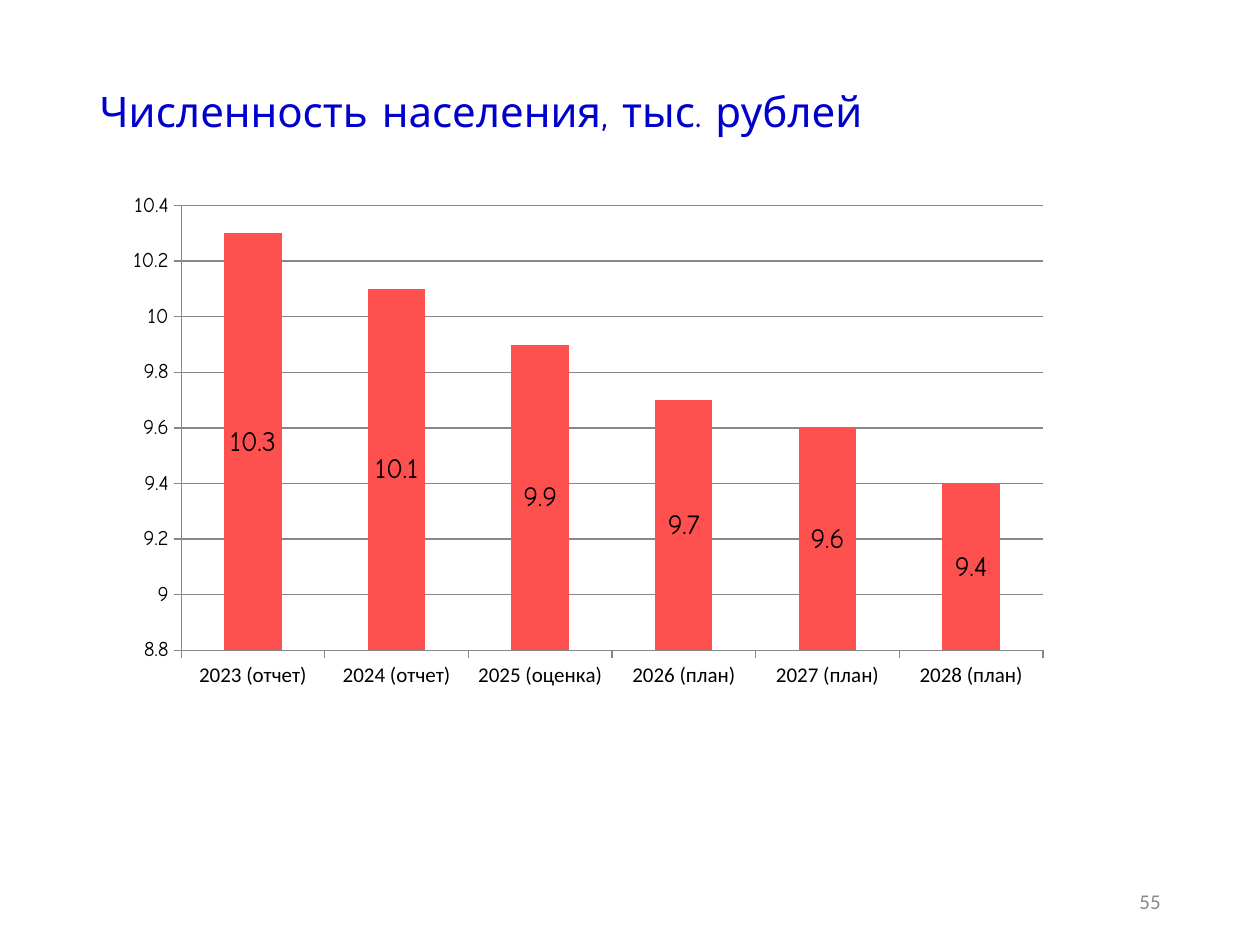
from dataclasses import dataclass

from lxml.etree import SubElement
from pptx import Presentation
from pptx.chart.data import CategoryChartData
from pptx.dml.color import RGBColor
from pptx.enum.chart import XL_CHART_TYPE as ChartType
from pptx.enum.chart import XL_LABEL_POSITION as LabelPosition
from pptx.enum.chart import XL_TICK_MARK as TickMark
from pptx.enum.text import MSO_ANCHOR as Anchor
from pptx.enum.text import MSO_AUTO_SIZE as AutoSize
from pptx.enum.text import PP_ALIGN as Align
from pptx.oxml.ns import qn
from pptx.util import Cm, Pt


@dataclass(frozen=True)
class Theme:
    heading: RGBColor = RGBColor(0x00, 0x00, 0xCC)
    text: RGBColor = RGBColor(0x00, 0x00, 0x00)
    muted: RGBColor = RGBColor(0x89, 0x89, 0x89)
    bar: RGBColor = RGBColor(0xFF, 0x50, 0x50)
    rule: RGBColor = RGBColor(0x87, 0x87, 0x87)
    accent_font: str = "Comic Neue"
    base_font: str = "Calibri"
    title_size: int = 24
    chart_size: int = 18
    label_size: int = 16
    small_size: int = 12


THEME = Theme()
POPULATION = {
    "2023 (отчет)": 10.3,
    "2024 (отчет)": 10.1,
    "2025 (оценка)": 9.9,
    "2026 (план)": 9.7,
    "2027 (план)": 9.6,
    "2028 (план)": 9.4,
}


def style_font(font, size, color=THEME.text, name=THEME.base_font):
    font.size = Pt(size)
    font.name = name
    font.color.rgb = color


def write_text(box, text, *, size, color, name, align=Align.LEFT, spacing=1.0):
    frame = box.text_frame
    frame.word_wrap = True
    frame.auto_size = AutoSize.NONE
    frame.vertical_anchor = Anchor.MIDDLE
    frame.text = text
    paragraph = frame.paragraphs[0]
    paragraph.alignment = align
    paragraph.line_spacing = spacing
    style_font(paragraph.runs[0].font, size, color, name)


def place_plot(chart, **fractions):
    """Fix the inner plot area, in fractions of the chart frame."""
    plot_area = chart._chartSpace.chart.plotArea
    for layout in plot_area.findall(qn("c:layout")):
        plot_area.remove(layout)
    layout = SubElement(plot_area, qn("c:layout"))
    plot_area.insert(0, layout)
    manual = SubElement(layout, qn("c:manualLayout"))
    settings = {"layoutTarget": "inner", "xMode": "edge", "yMode": "edge", **fractions}
    for tag, value in settings.items():
        SubElement(manual, qn(f"c:{tag}")).set("val", str(value))


def style_axis(axis, font_name):
    axis.major_tick_mark = TickMark.OUTSIDE
    axis.minor_tick_mark = TickMark.NONE
    axis.format.line.color.rgb = THEME.rule
    axis.format.line.width = Pt(0.75)
    style_font(axis.tick_labels.font, THEME.small_size, name=font_name)


def add_population_chart(slide):
    data = CategoryChartData()
    data.categories = list(POPULATION)
    data.add_series("Series 1", list(POPULATION.values()))
    chart = slide.shapes.add_chart(
        ChartType.COLUMN_STACKED, Cm(1.19), Cm(3.58), Cm(23.01), Cm(11.28), data
    ).chart
    chart.has_title = False
    chart.has_legend = False
    style_font(chart.font, THEME.chart_size)
    place_plot(chart, x=0.107, y=0.05, w=0.755, h=0.795)

    # Axes and gridlines
    years, people = chart.category_axis, chart.value_axis
    style_axis(years, THEME.base_font)
    style_axis(people, THEME.accent_font)
    people.minimum_scale, people.maximum_scale, people.major_unit = 8.8, 10.4, 0.2
    people.has_major_gridlines = True
    gridline = people.major_gridlines.format.line
    gridline.color.rgb = THEME.rule
    gridline.width = Pt(0.75)

    # Bars and their values
    bars = chart.plots[0]
    bars.gap_width = 150
    bars.overlap = 100
    bars.vary_by_categories = False
    population = bars.series[0]
    population.format.fill.solid()
    population.format.fill.fore_color.rgb = THEME.bar
    labels = population.data_labels
    labels.show_value = True
    labels.position = LabelPosition.CENTER
    style_font(labels.font, THEME.label_size, name=THEME.accent_font)


def main():
    deck = Presentation()
    deck.slide_width, deck.slide_height = Cm(25.4), Cm(19.05)
    slide = deck.slides.add_slide(deck.slide_layouts[5])

    # Title
    title = slide.shapes.title
    title.left, title.top, title.width, title.height = Cm(1.75), Cm(1.02), Cm(21.9), Cm(2.57)
    write_text(title, "Численность населения, тыс. рублей", size=THEME.title_size,
               color=THEME.heading, name=THEME.accent_font, spacing=0.9)

    # Page number
    page_number = slide.shapes.add_textbox(Cm(17.93), Cm(17.65), Cm(5.72), Cm(1.02))
    write_text(page_number, "55", size=THEME.small_size, color=THEME.muted,
               name=THEME.base_font, align=Align.RIGHT)

    add_population_chart(slide)
    deck.save("out.pptx")


if __name__ == "__main__":
    main()
